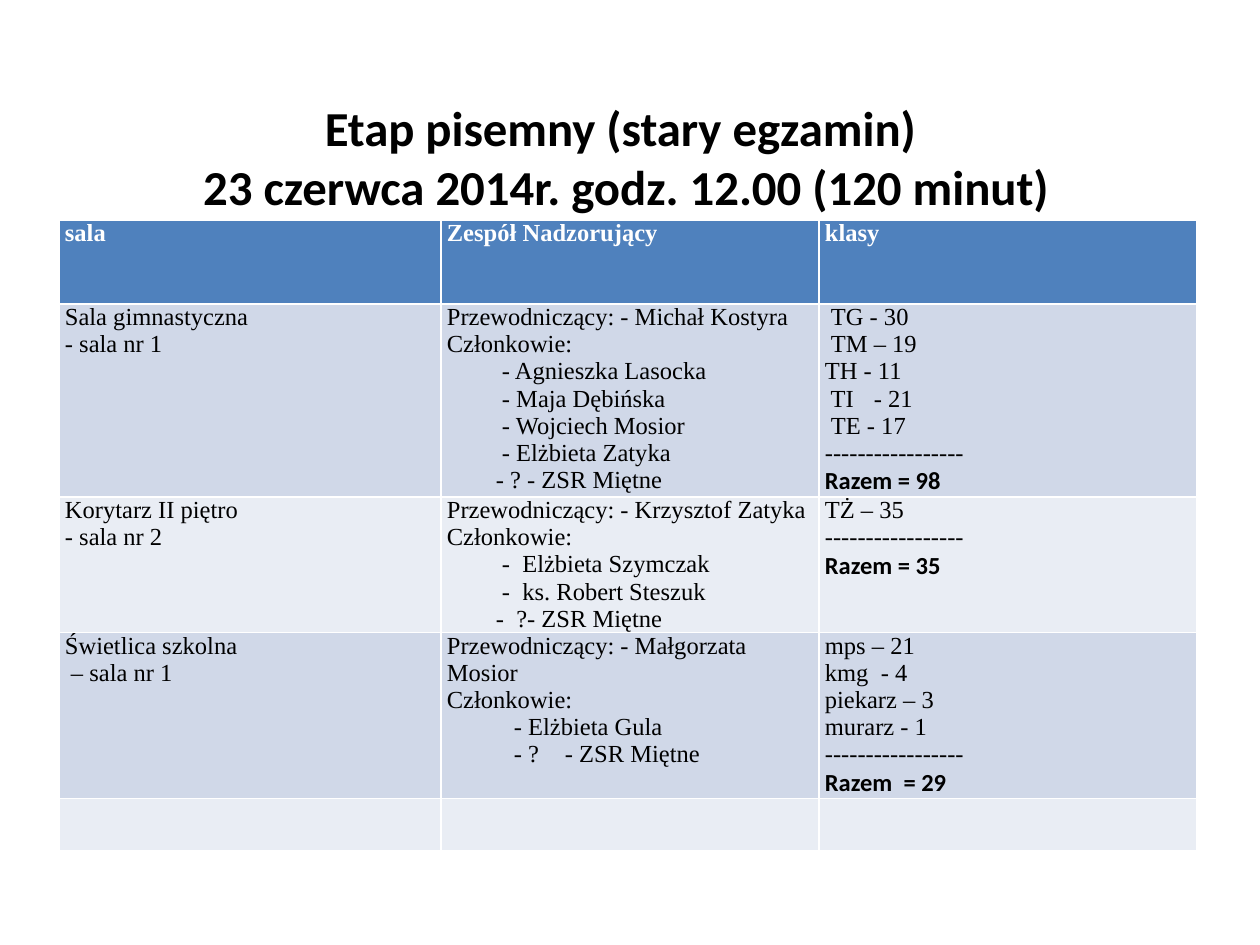
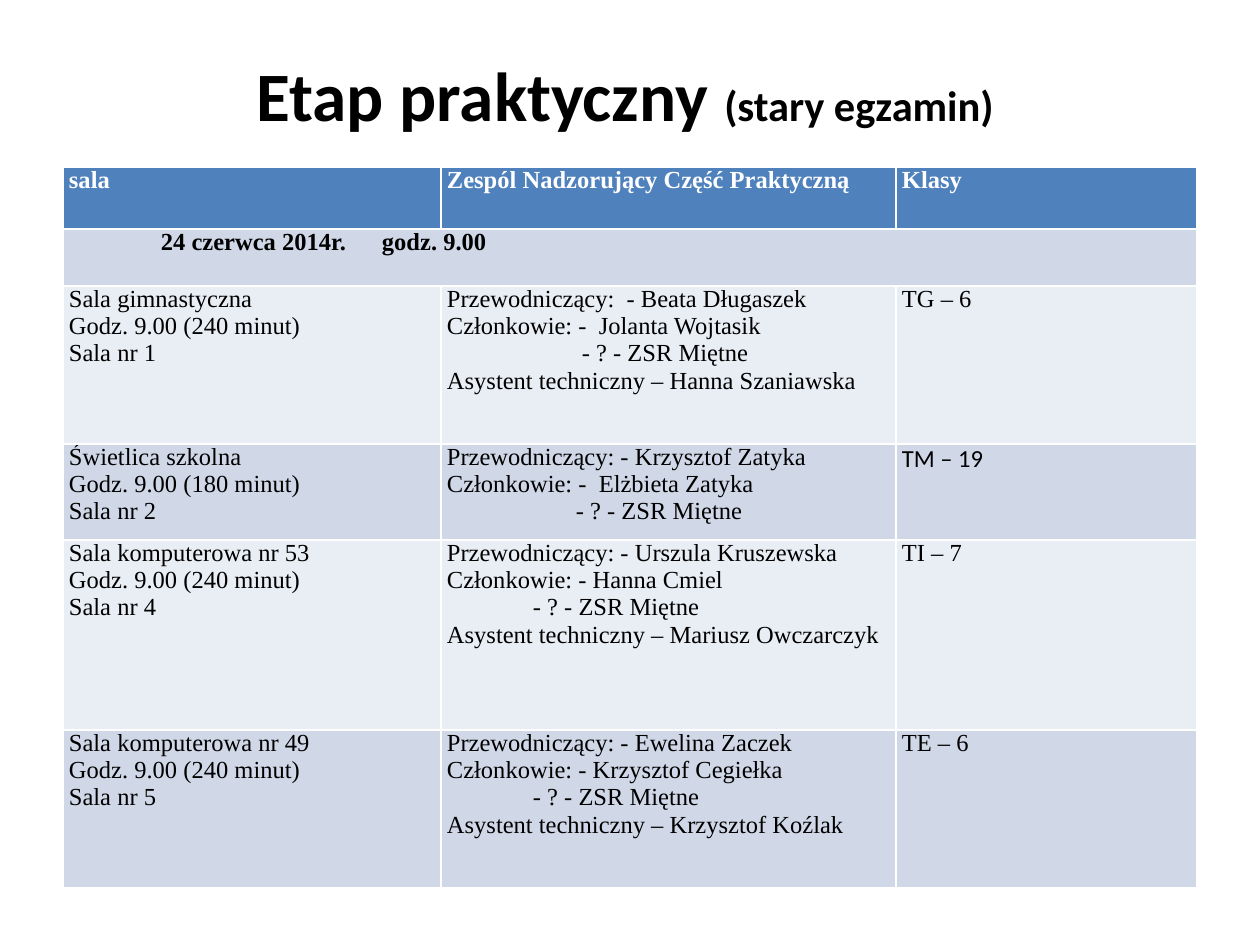
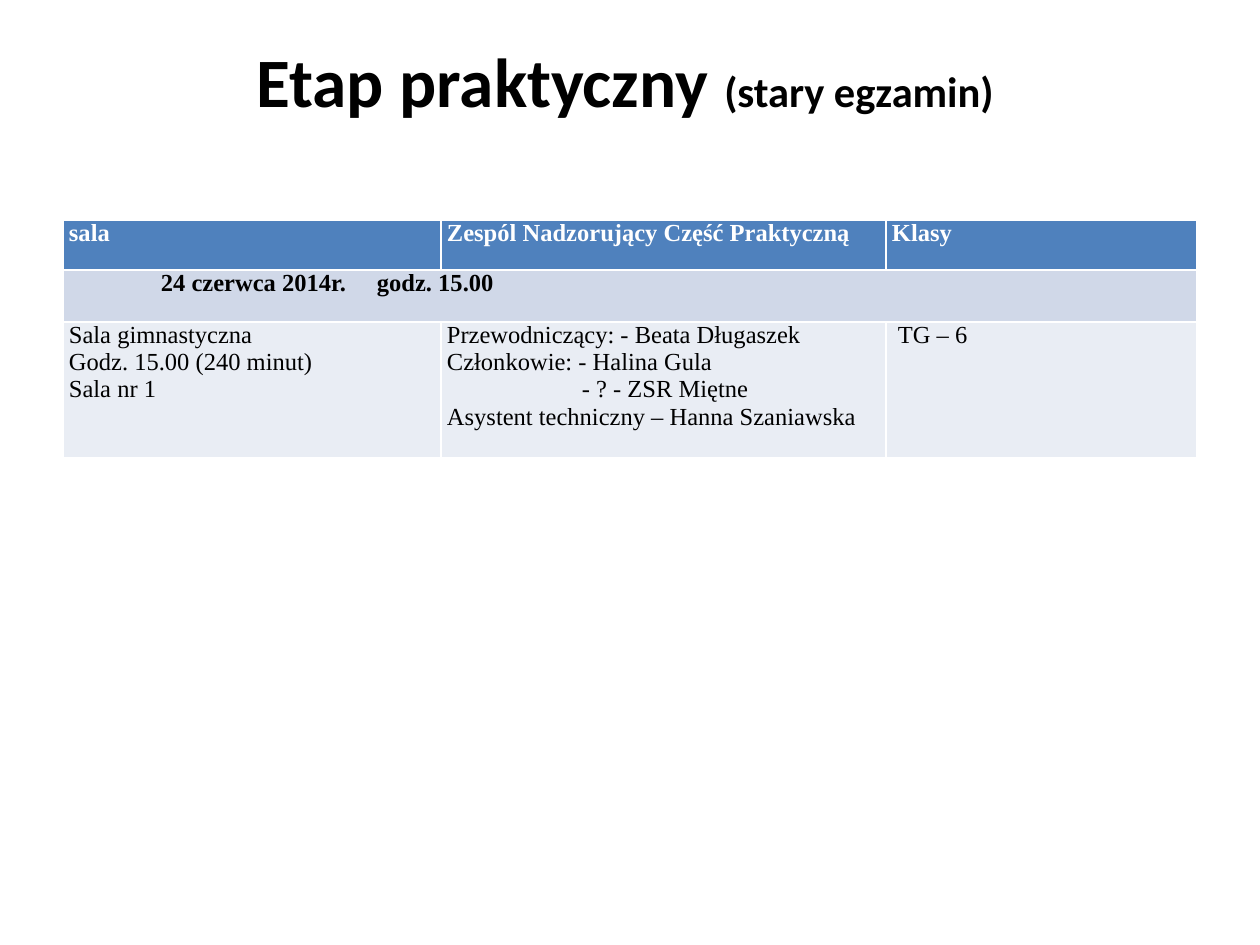
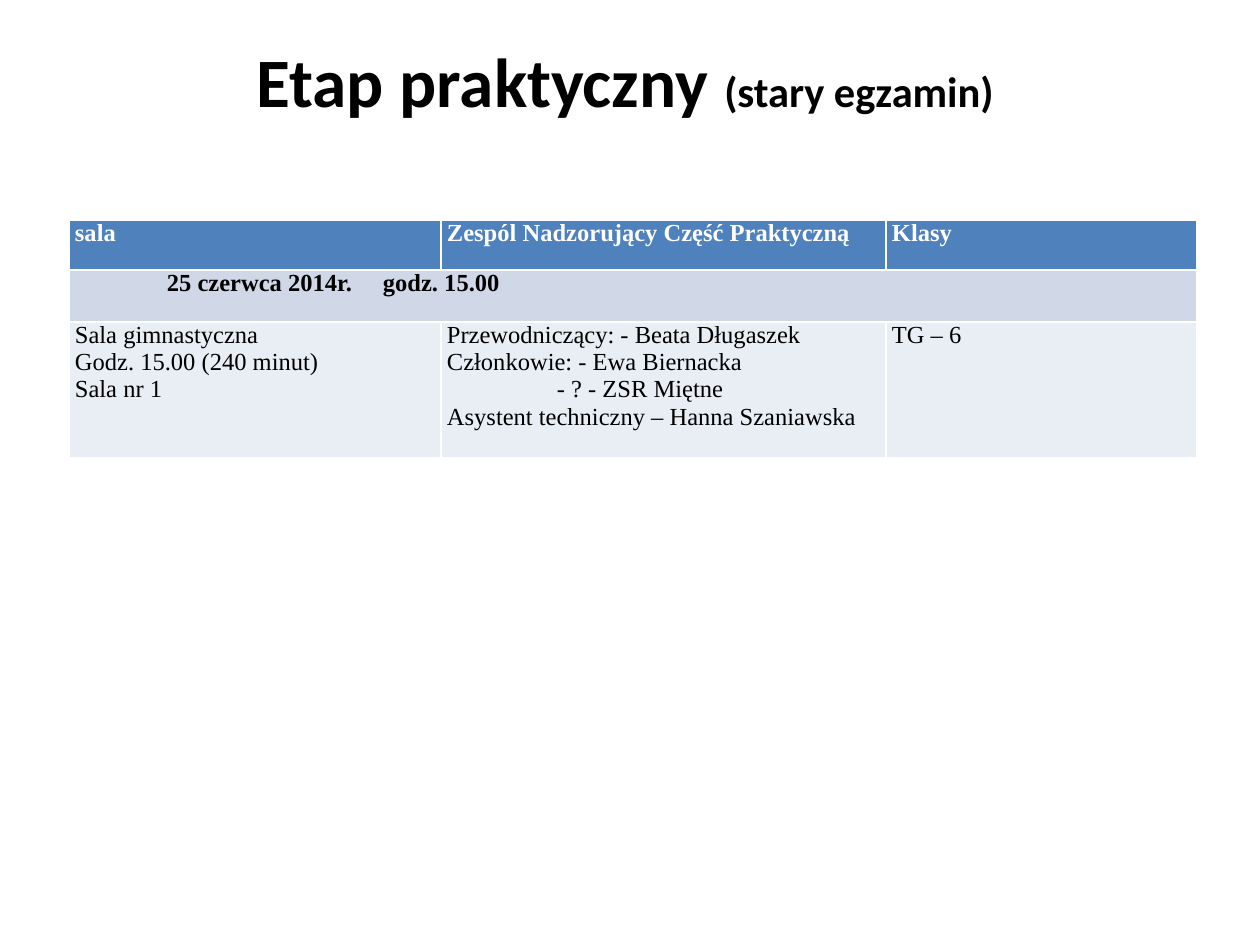
import pptx
import pptx.util
import pptx.dml.color
import pptx.enum.text
import pptx.oxml.ns
import lxml.etree
from dataclasses import dataclass


@dataclass(frozen=True)
class Theme:
    head: str = "4F81BD"
    odd: str = "D0D8E8"
    even: str = "E9EDF4"
    light: str = "FFFFFF"
    dark: str = "000000"
    sans: str = "Calibri"
    serif: str = "Times New Roman"
    body: float = 14
    exam: float = 27.9
    stage: float = 39.6
    note: float = 24.3


theme = Theme()


def px(n):
    return round(n * 914400 / 126)


def style(run, face, size, color, bold):
    run.font.name = face
    run.font.size = pptx.util.Pt(size)
    run.font.color.rgb = pptx.dml.color.RGBColor.from_string(color)
    run.font.bold = bold


# A line of a cell is a text, or (indent, text, tab stops...) with lengths in px.
# A row with one cell runs across the whole table.
rule = "-----------------"
note = "(stary egzamin) "
heads = [["sala"], ["Zespól Nadzorujący Część Praktyczną"], ["Klasy"]]
gym = ["Sala gimnastyczna", "Godz. 15.00 (240 minut)", "Sala nr 1"]
guest = "- ? - ZSR Miętne"
beata = "Przewodniczący: - Beata Długaszek"
hanna = "Asystent techniczny – Hanna Szaniawska"

written = [
    [["sala"], ["Zespół Nadzorujący"], ["klasy"]],
    [["Sala gimnastyczna", "- sala nr 1"],
     ["Przewodniczący: - Michał Kostyra", "Członkowie:",
      (55, "- Agnieszka Lasocka"), (55, "- Maja Dębińska"),
      (55, "- Wojciech Mosior"), (55, "- Elżbieta Zatyka"), (49, guest)],
     [(6, "TG - 30"), (6, "TM – 19"), "TH - 11", (0, " TI\t- 21", 49),
      (6, "TE - 17"), rule, "Razem = 98"]],
    [["Korytarz II piętro", "- sala nr 2"],
     ["Przewodniczący: - Krzysztof Zatyka", "Członkowie:",
      (55, "-  Elżbieta Szymczak"), (55, "-  ks. Robert Steszuk"),
      (49, "-  ?- ZSR Miętne")],
     ["TŻ – 35", rule, "Razem = 35"]],
    [["Świetlica szkolna", (6, "– sala nr 1")],
     ["Przewodniczący: - Małgorzata Mosior", "Członkowie:",
      (67, "- Elżbieta Gula"), (0, "\t- ?\t- ZSR Miętne", 67, 118)],
     ["mps – 21", "kmg  - 4", "piekarz – 3", "murarz - 1", rule, "Razem  = 29"]],
    [[], [], []],
]

morning = [
    heads,
    [[(0, "\t24 czerwca 2014r.\tgodz. 9.00", 92, 313)]],
    [["Sala gimnastyczna", "Godz. 9.00 (240 minut)", "Sala nr 1"],
     ["Przewodniczący:  - Beata Długaszek", "Członkowie: -  Jolanta Wojtasik",
      (135, guest), hanna],
     ["TG – 6"]],
    [["Świetlica szkolna", "Godz. 9.00 (180 minut)", "Sala nr 2"],
     ["Przewodniczący: - Krzysztof Zatyka", "Członkowie: -  Elżbieta Zatyka",
      (129, guest)],
     ["TM – 19"]],
    [["Sala komputerowa nr 53", "Godz. 9.00 (240 minut)", "Sala nr 4"],
     ["Przewodniczący: - Urszula Kruszewska", "Członkowie: - Hanna Cmiel",
      (86, guest), "Asystent techniczny – Mariusz Owczarczyk"],
     ["TI – 7"]],
    [["Sala komputerowa nr 49", "Godz. 9.00 (240 minut)", "Sala nr 5"],
     ["Przewodniczący: - Ewelina Zaczek", "Członkowie: - Krzysztof Cegiełka",
      (86, guest), "Asystent techniczny – Krzysztof Koźlak"],
     ["TE – 6"]],
]

first = [
    heads,
    [[(0, "\t24 czerwca 2014r.\tgodz. 15.00", 92, 308)]],
    [gym, [beata, "Członkowie: - Halina Gula", (135, guest), hanna], [(6, "TG – 6")]],
]

second = [
    heads,
    [[(0, "\t25 czerwca 2014r.\tgodz. 15.00", 92, 308)]],
    [gym, [beata, "Członkowie: - Ewa Biernacka", (110, guest), hanna], ["TG – 6"]],
]

exam = "Etap pisemny (stary egzamin) \v23 czerwca 2014r. godz. 12.00 (120 minut)"
stage = "Etap praktyczny "
short = [50, 52, 136]

# title, size, note, title box (left, top, inset), table corner, columns, rows, cells
pages = [
    (exam, theme.exam, "", (59, 59, 39), (59, 220),
     [382, 378, 378], [84, 193, 135, 166, 52], written),
    (stage, theme.stage, note, (63, 38, 14), (63, 167),
     [378, 455, 301], [62, 57, 158, 96, 190, 158], morning),
    (stage, theme.stage, note, (63, 38, 0), (63, 220),
     [378, 445, 311], short, first),
    (stage, theme.stage, note, (63, 38, 0), (69, 220),
     [372, 445, 311], short, second),
]

deck = pptx.Presentation()
deck.slide_width, deck.slide_height = px(1260), px(945)
grids = []

for head, size, tail, box, corner, cols, rows, cells in pages:
    slide = deck.slides.add_slide(deck.slide_layouts[5])
    title = slide.shapes.title
    title.left, title.top = px(box[0]), px(box[1])
    title.width, title.height = px(1134), px(158)
    frame = title.text_frame
    frame.auto_size = pptx.enum.text.MSO_AUTO_SIZE.NONE
    frame.vertical_anchor = pptx.enum.text.MSO_ANCHOR.TOP
    frame.margin_top = px(box[2])
    para = frame.paragraphs[0]
    para.text = head
    para.alignment = pptx.enum.text.PP_ALIGN.CENTER
    for run in para.runs:
        style(run, theme.sans, size, theme.dark, True)
    if tail:
        run = para.add_run()
        run.text = tail
        style(run, theme.sans, theme.note, theme.dark, True)

    grid = slide.shapes.add_table(len(rows), len(cols), px(corner[0]), px(corner[1]),
                                  px(sum(cols)), px(sum(rows))).table
    grids.append(grid)
    for col, width in zip(grid.columns, cols):
        col.width = px(width)
    for r, (height, row) in enumerate(zip(rows, cells)):
        grid.rows[r].height = px(height)
        if len(row) == 1:
            grid.cell(r, 0).merge(grid.cell(r, len(cols) - 1))
        fill = theme.head if r == 0 else theme.odd if r % 2 else theme.even
        for c in range(len(cols)):
            cell = grid.cell(r, c)
            cell.fill.solid()
            cell.fill.fore_color.rgb = pptx.dml.color.RGBColor.from_string(fill)
            cell.margin_left = cell.margin_right = px(6)
            cell.margin_top = cell.margin_bottom = 0
            for i, line in enumerate(row[c] if c < len(row) else []):
                indent, text, *stops = (0, line) if isinstance(line, str) else line
                frame = cell.text_frame
                para = frame.add_paragraph() if i else frame.paragraphs[0]
                para.text = text
                props = para._p.get_or_add_pPr()
                if indent:
                    props.set("marL", str(px(indent)))
                if stops:
                    tabs = lxml.etree.SubElement(props, pptx.oxml.ns.qn("a:tabLst"))
                    for stop in stops:
                        lxml.etree.SubElement(tabs, pptx.oxml.ns.qn("a:tab"),
                                              pos=str(px(stop)), algn="l")
                total = text.startswith("Razem")
                for run in para.runs:
                    style(run, theme.sans if total else theme.serif, theme.body,
                          theme.dark if r else theme.light,
                          total or r == 0 or len(row) == 1)

# The class TM is set in the sans face on the morning plan.
grids[1].cell(3, 2).text_frame.paragraphs[0].runs[0].font.name = theme.sans

deck.save("out.pptx")
